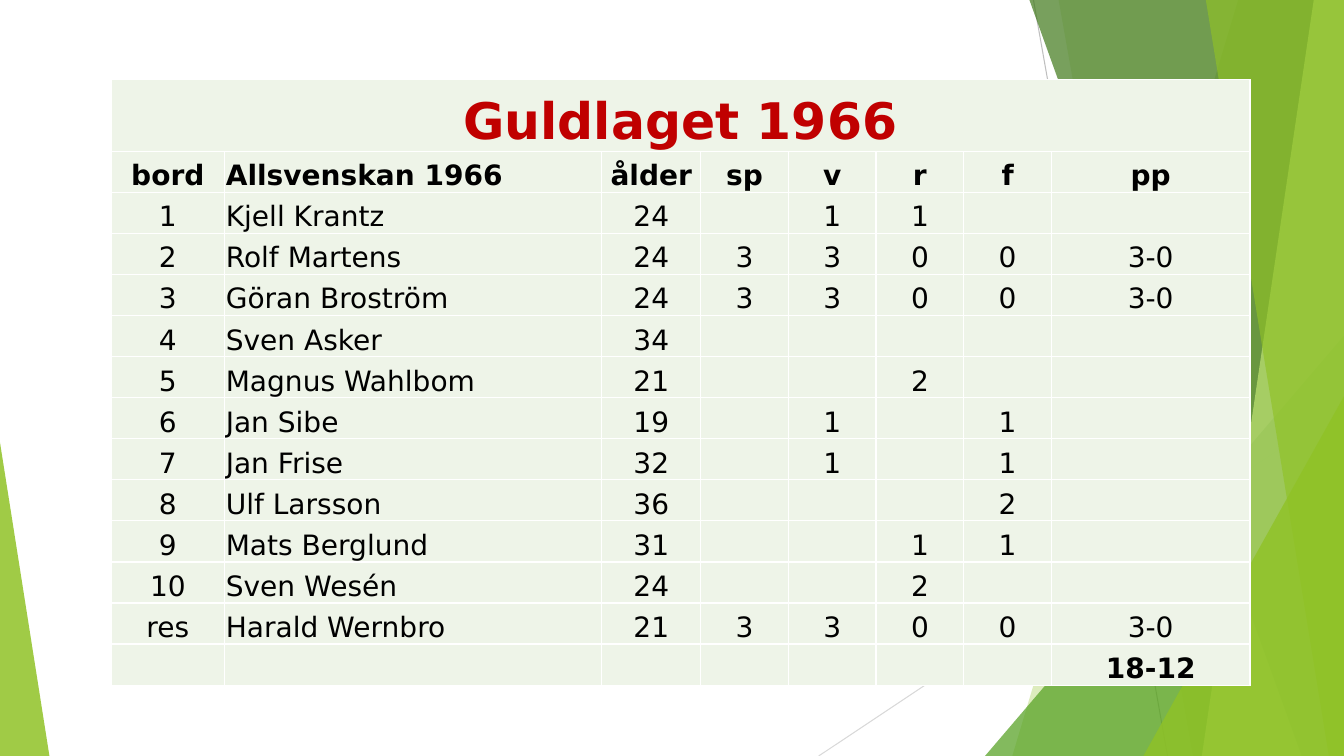
from lxml.etree import SubElement as Sub
from pptx import Presentation
from pptx.dml.color import RGBColor as Rgb
from pptx.enum.shapes import MSO_CONNECTOR as Conn, MSO_SHAPE as Form
from pptx.enum.text import MSO_ANCHOR as Anchor, PP_ALIGN as Align
from pptx.oxml.ns import qn
from pptx.util import Inches, Pt

WIDE, HIGH = 13.33, 7.5
WING = (9.77, 0, 3.56, HIGH)
EDGE = (0, 4.39, 0.49, 3.11)
GRID = (1.1, 0.79, 11.31, 6.01)

RAYS = [((0.48, 0), (1.81, 7.5), "BFBFBF"), ((3.56, 4.03), (-1.65, 7.5), "D9D9D9")]
PANES = [
    ("band", 2.51, 0.27, "90C226", 30),
    ("band", 0.73, 2.06, "90C226", 20),
    ("peak", 0, 3.33, "54A021", 72),
    ("band", 0.44, 3.14, "3F7819", 70),
    ("band", 3.26, 2.15, "C0E474", 70),
    ("band", 2.19, 3.41, "90C226", 65),
    ("peak", 1.57, 3.93, "90C226", 80),
]

COLS = [1.13, 3.74, 0.98, 0.87, 0.87, 0.87, 0.87, 1.97]
HEAD = 0.71
TEAM = """Guldlaget 1966|||||||
bord|Allsvenskan 1966|ålder|sp|v|r|f|pp
1|Kjell Krantz|24||1|1||
2|Rolf Martens|24|3|3|0|0|3-0
3|Göran Broström|24|3|3|0|0|3-0
4|Sven Asker|34|||||
5|Magnus Wahlbom|21|||2||
6|Jan Sibe|19||1||1|
7|Jan Frise|32||1||1|
8|Ulf Larsson|36||||2|
9|Mats Berglund|31|||1|1|
10|Sven Wesén|24|||2||
res|Harald Wernbro|21|3|3|0|0|3-0
|||||||18-12"""
ROWS = [line.split("|") for line in TEAM.splitlines()]

CELL = {"margin_left": Inches(0.01), "margin_right": Inches(0.01),
        "margin_top": Inches(0.01), "margin_bottom": 0,
        "vertical_anchor": Anchor.BOTTOM}
PLAIN = {"name": "DejaVu Sans", "size": Pt(20), "bold": False}
BOLD = {**PLAIN, "bold": True}
TITLE = {**BOLD, "size": Pt(36)}


def put(obj, look):
    """Set each value of a format on an object."""
    for key, val in look.items():
        setattr(obj, key, val)


def paint(fill, tone):
    """Give a fill or a line fill one solid colour."""
    fill.solid()
    fill.fore_color.rgb = Rgb.from_string(tone)


def glaze(shape, tone, share):
    """Fill a shape with a see-through colour and drop its outline."""
    shape.shadow.inherit = False
    paint(shape.fill, tone)
    shape.line.fill.background()
    hue = shape.element.spPr.find(qn("a:solidFill"))[0]
    Sub(hue, qn("a:alpha"), val=str(share * 1000))


def ray(slide, box, start, end, tone):
    """Draw a thin line between two points of the box."""
    x, y = box[:2]
    spots = [Inches(n) for n in (x + start[0], y + start[1], x + end[0], y + end[1])]
    line = slide.shapes.add_connector(Conn.STRAIGHT, *spots)
    paint(line.line.fill, tone)
    line.line.width = Pt(0.75)
    Sub(line.element.spPr, qn("a:effectLst"))


def band(slide, box, top, foot):
    """Draw a slanted band that fills the box to its right edge."""
    x, y, w, h = box
    spots = [(x + top, y), (x + w, y), (x + w, y + h), (x + foot, y + h)]
    spots = [(Inches(a), Inches(b)) for a, b in spots]
    pen = slide.shapes.build_freeform(*spots[0])
    pen.add_line_segments(spots[1:], close=True)
    return pen.convert_to_shape()


def peak(slide, box, left, top, tip=1):
    """Draw a right triangle in the lower right part of the box."""
    x, y, w, h = box
    size = [Inches(n) for n in (x + left, y + top, w - left, h - top)]
    shape = slide.shapes.add_shape(Form.ISOSCELES_TRIANGLE, *size)
    shape.adjustments[0] = tip
    return shape


def wing(slide, box):
    """Layer the rays and green panes at the right of the slide."""
    for start, end, tone in RAYS:
        ray(slide, box, start, end, tone)
    draw = {"band": band, "peak": peak}
    for kind, a, b, tone, share in PANES:
        glaze(draw[kind](slide, box, a, b), tone, share)


def frame(cell):
    """Put a thin white border on all sides of a cell."""
    prop = cell._tc.get_or_add_tcPr()
    for side in ("lnL", "lnR", "lnT", "lnB"):
        line = Sub(prop, qn("a:" + side), w=str(Pt(1)))
        Sub(Sub(line, qn("a:solidFill")), qn("a:srgbClr"), val="FFFFFF")


def write(cell, text, align, look, tone):
    """Write one formatted run in a cell."""
    para = cell.text_frame.paragraphs[0]
    para.alignment = align
    run = para.add_run()
    run.text = text
    put(run.font, look)
    run.font.color.rgb = Rgb.from_string(tone)


def roster(slide, box):
    """Build the team table in the box."""
    size = [Inches(n) for n in box]
    table = slide.shapes.add_table(len(ROWS), len(COLS), *size).table
    put(table, {"first_row": False, "horz_banding": False})
    for col, wide in zip(table.columns, COLS):
        col.width = Inches(wide)
    step = (box[3] - HEAD) / (len(ROWS) - 1)
    for i, row in enumerate(ROWS):
        table.rows[i].height = Inches(step if i else HEAD)
        look = BOLD if i in (1, len(ROWS) - 1) else PLAIN
        for j, text in enumerate(row):
            cell = table.cell(i, j)
            frame(cell)
            put(cell, CELL)
            paint(cell.fill, "EEF4E8")
            if text:
                align = Align.LEFT if j == 1 else Align.CENTER
                write(cell, text, align, look if i else TITLE,
                      "000000" if i else "C00000")
    table.cell(0, 0).merge(table.cell(0, len(COLS) - 1))


def main():
    """Build and save the slide."""
    deck = Presentation()
    put(deck, {"slide_width": Inches(WIDE), "slide_height": Inches(HIGH)})
    slide = deck.slides.add_slide(deck.slide_layouts[6])
    wing(slide, WING)
    glaze(peak(slide, EDGE, 0, 0, 0), "90C226", 85)
    roster(slide, GRID)
    deck.save("out.pptx")


if __name__ == "__main__":
    main()
